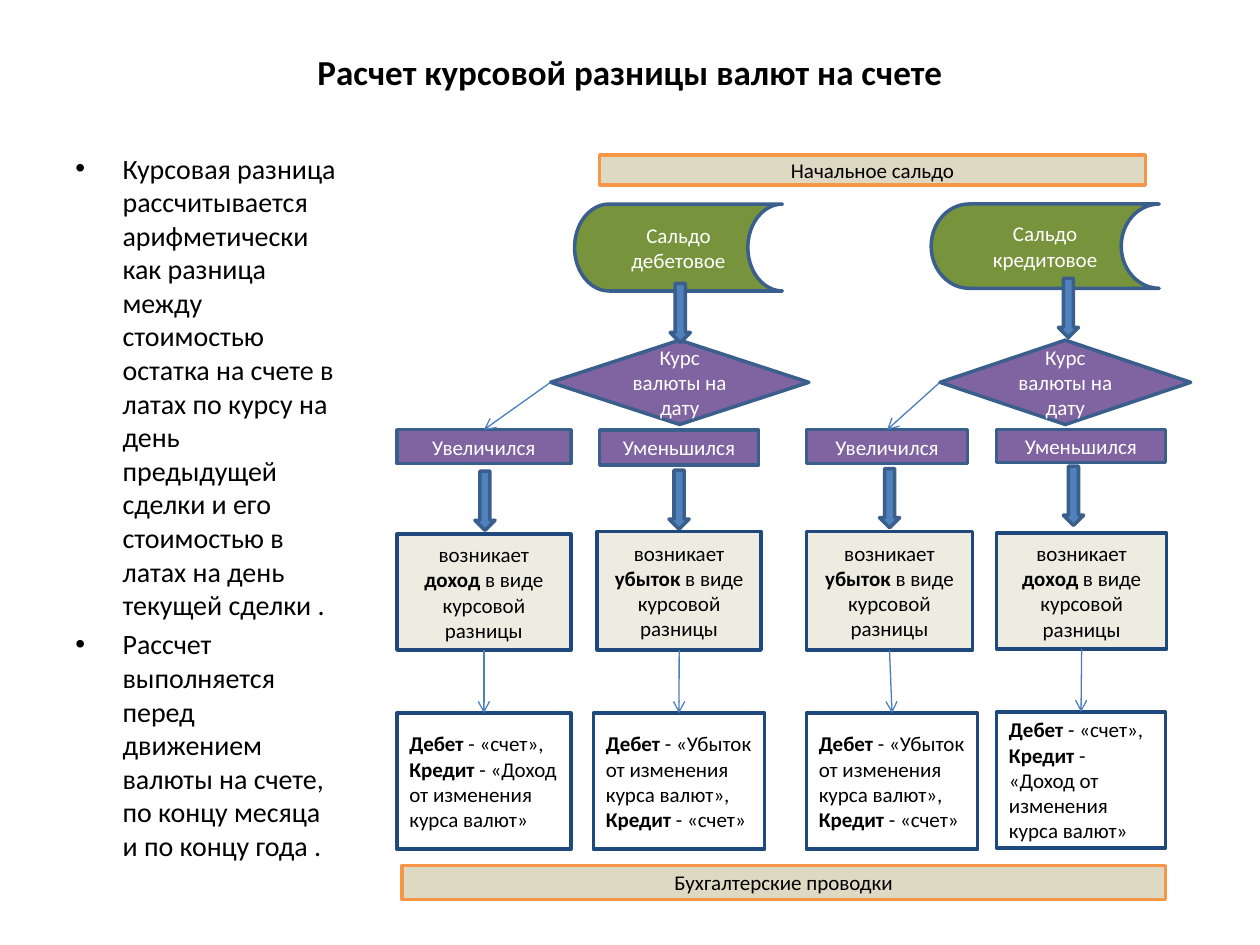
from dataclasses import dataclass

from lxml import etree
from pptx import Presentation
from pptx.dml.color import RGBColor
from pptx.enum.shapes import MSO_CONNECTOR, MSO_SHAPE
from pptx.enum.text import MSO_ANCHOR, PP_ALIGN
from pptx.oxml.ns import qn
from pptx.util import Pt

RECTANGLE = MSO_SHAPE.RECTANGLE
STORAGE = MSO_SHAPE.FLOWCHART_STORED_DATA
DECISION = MSO_SHAPE.FLOWCHART_DECISION
DOWN_ARROW = MSO_SHAPE.DOWN_ARROW
STRAIGHT = MSO_CONNECTOR.STRAIGHT
LEFT, CENTER = PP_ALIGN.LEFT, PP_ALIGN.CENTER
MIDDLE, TOP = MSO_ANCHOR.MIDDLE, MSO_ANCHOR.TOP
SITE_TOP, SITE_LEFT, SITE_BOTTOM = 0, 1, 2
TITLE_ONLY = 5


@dataclass(frozen=True)
class Theme:
    """Fonts, sizes, line widths and (fill, line, text) colours."""
    font: str = "Calibri"
    title_size: float = 20
    body_size: float = 16
    label_size: float = 12
    outline: float = 2
    thin: float = 0.75
    text: str = "000000"
    connector: str = "4B7EBC"
    banner: tuple = ("DDD9C3", "F79646", "000000")
    balance: tuple = ("77933C", "3A5F8C", "FFFFFF")
    rate: tuple = ("8064A2", "3A5F8C", "FFFFFF")
    arrow: tuple = ("4F81BD", "3A5F8C", "FFFFFF")
    result: tuple = ("EEECE1", "1F497D", "000000")
    entry: tuple = ("FFFFFF", "1F497D", "000000")


@dataclass(frozen=True)
class Box:
    """A rectangle in points."""
    left: float
    top: float
    width: float
    height: float

    def inside(self, left, top, width, height):
        """Return a box placed relative to this one."""
        return Box(self.left + left, self.top + top, width, height)

    def points(self):
        """Return the four lengths as Pt values."""
        return Pt(self.left), Pt(self.top), Pt(self.width), Pt(self.height)


THEME = Theme()
INCOME_ENTRY = ([("Дебет", True), (" - «счет»,", False)],
                [("Кредит", True), (" - «Доход от изменения курса валют»", False)])
LOSS_ENTRY = ([("Дебет", True), (" - «Убыток от изменения курса валют»,", False)],
              [("Кредит", True), (" - «счет»", False)])
OUTCOMES = {"доход": INCOME_ENTRY, "убыток": LOSS_ENTRY}


def plain(text):
    """Wrap one string as a single paragraph of one regular run."""
    return ([(text, False)],)


def write(frame, paragraphs, size, color, alignment, anchor=MIDDLE):
    """Fill a text frame with paragraphs of (text, bold) runs."""
    frame.word_wrap = True
    frame.vertical_anchor = anchor
    for index, runs in enumerate(paragraphs):
        paragraph = frame.add_paragraph() if index else frame.paragraphs[0]
        paragraph.alignment = alignment
        paragraph.font.name = THEME.font
        paragraph.font.size = Pt(size)
        paragraph.font.color.rgb = RGBColor.from_string(color)
        for text, bold in runs:
            run = paragraph.add_run()
            run.text = text
            run.font.bold = bold


def add_block(slide, kind, box, colors, paragraphs=(), alignment=CENTER):
    """Add a filled, outlined shape with optional text."""
    fill, line, text = colors
    shape = slide.shapes.add_shape(kind, *box.points())
    shape.shadow.inherit = False
    shape.fill.solid()
    shape.fill.fore_color.rgb = RGBColor.from_string(fill)
    shape.line.color.rgb = RGBColor.from_string(line)
    shape.line.width = Pt(THEME.outline)
    write(shape.text_frame, paragraphs, THEME.label_size, text, alignment)
    return shape


def connect(slide, start, start_site, end, end_site):
    """Join two shapes with a thin open-headed arrow."""
    connector = slide.shapes.add_connector(STRAIGHT, 0, 0, 0, 0)
    connector.begin_connect(start, start_site)
    connector.end_connect(end, end_site)
    connector.line.color.rgb = RGBColor.from_string(THEME.connector)
    connector.line.width = Pt(THEME.thin)
    properties = connector._element.spPr
    etree.SubElement(properties.find(qn("a:ln")), qn("a:tailEnd"), type="arrow")
    etree.SubElement(properties, qn("a:effectLst"))


def draw_title(slide, box, text):
    """Place and format the title placeholder."""
    title = slide.shapes.title
    title.left, title.top, title.width, title.height = box.points()
    write(title.text_frame, ([(text, True)],), THEME.title_size, THEME.text, CENTER)


def draw_explanation(slide, box, texts):
    """Draw the bulleted text at the left."""
    frame = slide.shapes.add_textbox(*box.points()).text_frame
    write(frame, [[(text, False)] for text in texts],
          THEME.body_size, THEME.text, LEFT, TOP)
    for paragraph in frame.paragraphs:
        paragraph.space_before = Pt(THEME.body_size * 0.2)
        properties = paragraph._p.get_or_add_pPr()
        properties.set("marL", str(Pt(27)))
        properties.set("indent", str(Pt(-27)))
        etree.SubElement(properties, qn("a:buFont"), typeface="Arial")
        etree.SubElement(properties, qn("a:buChar"), char="•")


def draw_outcome(slide, box, label, outcome, header, arrow, result, entry):
    """Draw one column from rate change to bookkeeping entry; return its header."""
    header_shape = add_block(slide, RECTANGLE, box.inside(*header), THEME.rate, plain(label))
    add_block(slide, DOWN_ARROW, box.inside(*arrow, 11.5, 33.8), THEME.arrow)
    sentence = ([("возникает ", False), (outcome, True),
                 (" в виде курсовой разницы", False)],)
    result_shape = add_block(slide, RECTANGLE, box.inside(*result), THEME.result, sentence)
    entry_shape = add_block(slide, RECTANGLE, box.inside(*entry), THEME.entry,
                            OUTCOMES[outcome], LEFT)
    connect(slide, result_shape, SITE_BOTTOM, entry_shape, SITE_TOP)
    return header_shape


def draw_branch(slide, box, label, balance, decision, arrow, columns):
    """Draw a balance, its rate decision and the two outcome columns."""
    add_block(slide, STORAGE, box.inside(*balance), THEME.balance, plain(label))
    decision_shape = add_block(slide, DECISION, box.inside(*decision), THEME.rate,
                               plain("Курс валюты на дату"))
    add_block(slide, DOWN_ARROW, box.inside(*arrow, 11.5, 33.8), THEME.arrow)
    headers = [draw_outcome(slide, box.inside(left, 129, 100, 240), *column)
               for left, *column in columns]
    connect(slide, decision_shape, SITE_LEFT, headers[0], SITE_TOP)


def main():
    """Build and save the slide."""
    presentation = Presentation()
    presentation.slide_width, presentation.slide_height = Pt(720), Pt(540)
    slide = presentation.slides.add_slide(presentation.slide_layouts[TITLE_ONLY])
    draw_title(slide, Box(36, 21.6, 648, 38.9), "Расчет курсовой разницы валют на счете")
    draw_explanation(slide, Box(36, 82.8, 165.6, 430.6), (
        "Курсовая разница рассчитывается арифметически как разница между стоимостью "
        "остатка на счете в латах по курсу на день предыдущей сделки и его стоимостью "
        "в латах на день текущей сделки .",
        "Рассчет выполняется перед движением валюты на счете, "
        "по концу месяца и по концу года ."))
    add_block(slide, RECTANGLE, Box(342.7, 88.6, 311.8, 17.3), THEME.banner,
              plain("Начальное сальдо"))
    draw_branch(
        slide, Box(226.8, 116.6, 235.4, 368.7), "Сальдо дебетовое",
        (101.5, 0, 118.8, 49.7), (87.8, 77.8, 147.6, 48.2), (156.2, 45.4),
        ((0, "Увеличился", "доход", (0, 0, 99.4, 19.4), (44.6, 23.7),
          (0, 59.7, 99.4, 66.2), (0, 161.9, 99.4, 77.8)),
         (112.3, "Уменьшился", "убыток", (3.6, 0, 90.7, 20.2), (43.2, 23),
          (2.2, 58.2, 93.6, 67.7), (0, 161.9, 97.9, 77.8))))
    draw_branch(
        slide, Box(460.8, 116.6, 219.6, 368.7), "Сальдо кредитовое",
        (71.3, 0, 130.3, 48.2), (76.3, 77.8, 143.3, 48.2), (144, 42.5),
        ((0, "Увеличился", "убыток", (0, 0, 92.2, 19.4), (41.8, 22.2),
          (0, 58.2, 95, 67.7), (0, 161.9, 97.9, 77.8)),
         (108.7, "Уменьшился", "доход", (0, 0, 96.5, 18.7), (38.2, 20.8),
          (0, 59, 97.2, 66.2), (0, 161.2, 96.5, 77.8))))
    add_block(slide, RECTANGLE, Box(229.7, 494.6, 436.3, 19.4), THEME.banner,
              plain("Бухгалтерские проводки"))
    presentation.save("out.pptx")


if __name__ == "__main__":
    main()
